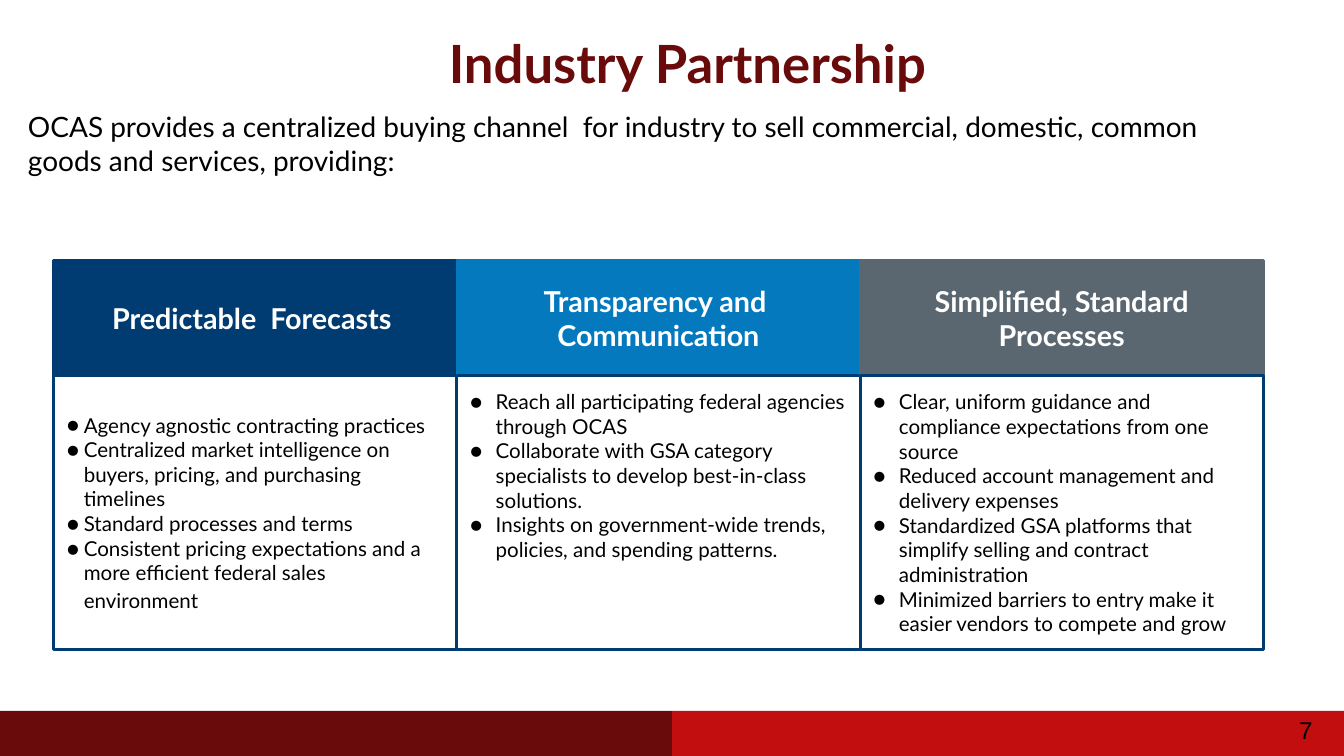
from lxml.etree import SubElement
from pptx import Presentation
from pptx.dml.color import RGBColor
from pptx.enum.shapes import MSO_SHAPE as Shape
from pptx.enum.text import MSO_ANCHOR as Anchor, PP_ALIGN as Align
from pptx.oxml.ns import qn
from pptx.util import Pt

PX = 4572
BLACK = RGBColor(0x00, 0x00, 0x00)
WHITE = RGBColor(0xFF, 0xFF, 0xFF)
MAROON = RGBColor(0x69, 0x0B, 0x0B)
RED = RGBColor(0xC2, 0x0E, 0x0E)
NAVY = RGBColor(0x00, 0x3C, 0x71)
BLUE = RGBColor(0x05, 0x79, 0xBD)
GRAY = RGBColor(0x5B, 0x67, 0x70)

HEADING = {"name": "Lato", "size": Pt(15.4), "bold": True}
BODY = {"name": "Lato", "size": Pt(11), "bold": False}
FRAME = {"word_wrap": True, "margin_left": 20 * PX, "margin_top": 20 * PX,
         "margin_right": 20 * PX, "margin_bottom": 20 * PX}


def add_block(left, top, width, height, fill=None, line=None):
    block = slide.shapes.add_shape(
        Shape.RECTANGLE, left * PX, top * PX, width * PX, height * PX)
    block.shadow.inherit = False
    if fill is None:
        block.fill.background()
    else:
        block.fill.solid()
        block.fill.fore_color.rgb = fill
    if line is None:
        block.line.fill.background()
    else:
        block.line.color.rgb = line
        block.line.width = Pt(1.5)
    for attribute, value in FRAME.items():
        setattr(block.text_frame, attribute, value)
    return block.text_frame


def write(paragraph, text, color, align, style):
    paragraph.alignment = align
    run = paragraph.add_run()
    run.text = text
    run.font.color.rgb = color
    for attribute, value in style.items():
        setattr(run.font, attribute, value)


deck = Presentation()
deck.slide_width = 2000 * PX
deck.slide_height = 1125 * PX
slide = deck.slides.add_slide(deck.slide_layouts[6])

for left, color in ((1000, RED), (0, MAROON)):
    add_block(left, 1058, 1000, 67, color)

for left, top, width, height, text, color, align, indent, style in (
    (1853, 1045, 120, 86, "7", BLACK, Align.RIGHT, 0,
     {"name": "Arial", "size": Pt(13)}),
    (152, 26, 1642, 136, "Industry Partnership", MAROON, Align.CENTER, 100,
     {"name": "Lato", "size": Pt(28.2), "bold": True}),
    (22, 143, 1822, 142,
     "OCAS provides a centralized buying channel  for industry to sell "
     "commercial, domestic, common goods and services, providing:",
     BLACK, Align.LEFT, 0, {"name": "Lato", "size": Pt(15)}),
):
    frame = slide.shapes.add_textbox(
        left * PX, top * PX, width * PX, height * PX).text_frame
    for attribute, value in FRAME.items():
        setattr(frame, attribute, value)
    frame.paragraphs[0]._p.get_or_add_pPr().set("indent", str(indent * PX))
    write(frame.paragraphs[0], text, color, align, style)

benefits = (
    ("Predictable  Forecasts ", NAVY, Anchor.MIDDLE, 25, (
        "Agency agnostic contracting practices",
        "Centralized market intelligence on buyers, pricing, and purchasing timelines",
        "Standard processes and terms",
        "Consistent pricing expectations and a more efficient federal sales environment",
    )),
    ("Transparency and  Communication", BLUE, Anchor.TOP, 38, (
        "Reach all participating federal agencies through OCAS",
        "Collaborate with GSA category specialists to develop best-in-class solutions.",
        "Insights on government-wide trends, policies, and spending patterns.",
    )),
    ("Simplified, Standard Processes", GRAY, Anchor.MIDDLE, 38, (
        "Clear, uniform guidance and compliance expectations from one source",
        "Reduced account management and delivery expenses",
        "Standardized GSA platforms that simplify selling and contract administration",
        "Minimized barriers to entry make it easier vendors to compete and grow",
    )),
)

for column, (heading, color, anchor, indent, points) in enumerate(benefits):
    left = 80 + 600 * column
    header = add_block(left, 388, 600, 171, color, color)
    header.vertical_anchor = Anchor.MIDDLE
    write(header.paragraphs[0], heading, WHITE, Align.CENTER, HEADING)

    details = add_block(left, 559, 600, 408, line=NAVY)
    details.vertical_anchor = anchor
    for index, point in enumerate(points):
        paragraph = details.paragraphs[0] if index == 0 else details.add_paragraph()
        properties = paragraph._p.get_or_add_pPr()
        properties.set("marL", str(indent * PX))
        properties.set("indent", str(-40 * PX))
        bullet_color = SubElement(properties, qn("a:buClr"))
        SubElement(bullet_color, qn("a:srgbClr")).set("val", str(BLACK))
        SubElement(properties, qn("a:buSzPts")).set("val", "1100")
        SubElement(properties, qn("a:buFont")).set("typeface", "Lato")
        SubElement(properties, qn("a:buChar")).set("char", "●")
        write(paragraph, point, BLACK, Align.LEFT, BODY)
    if column == 0:
        write(paragraph, " ", BLACK, Align.LEFT, {**BODY, "size": Pt(12.4)})

deck.save("out.pptx")
